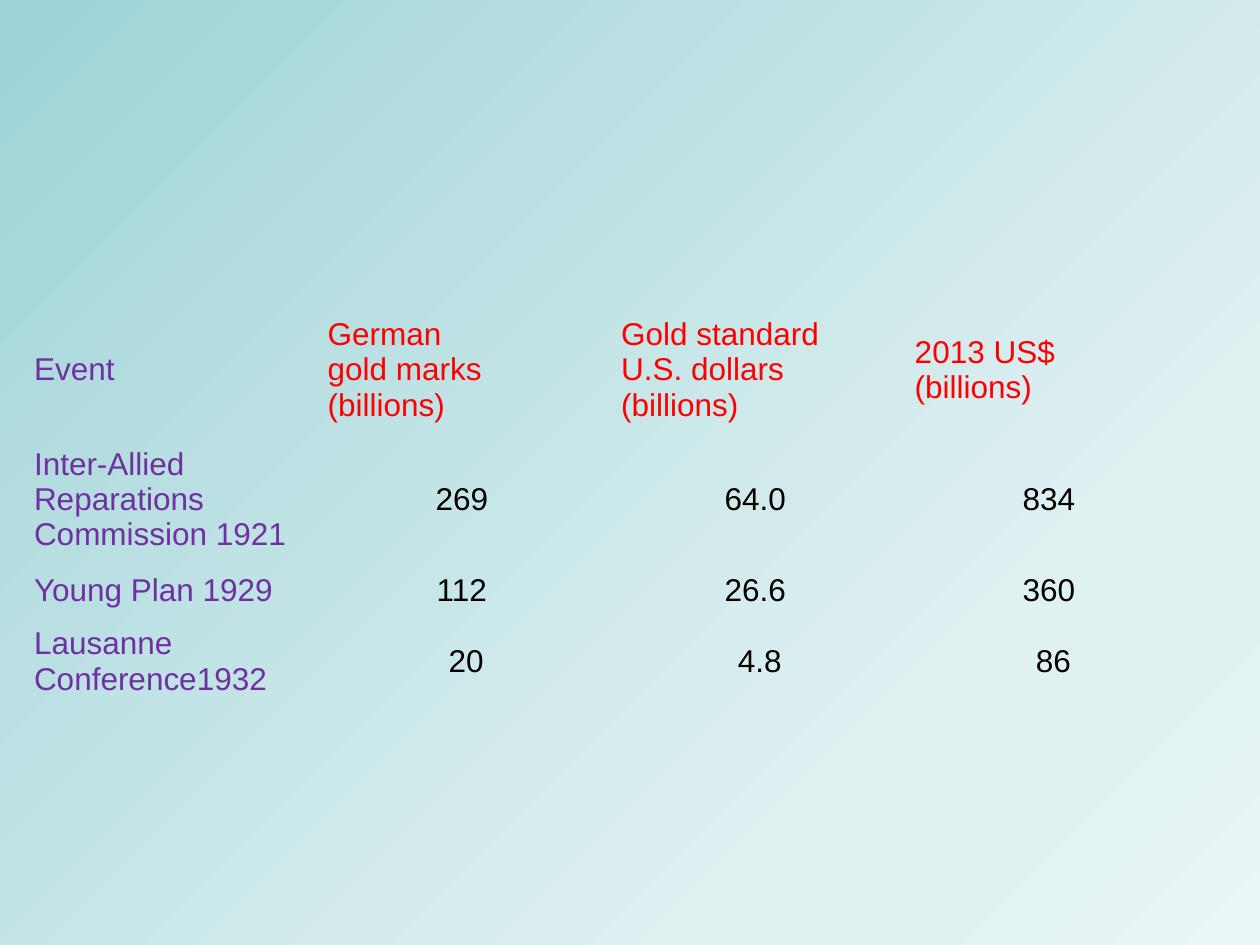
from lxml import etree
from pptx import Presentation
from pptx.dml.color import RGBColor
from pptx.enum.text import MSO_ANCHOR, PP_ALIGN
from pptx.oxml.ns import qn
from pptx.util import Inches, Pt

MIDDLE = MSO_ANCHOR.MIDDLE
LEFT, CENTER = PP_ALIGN.LEFT, PP_ALIGN.CENTER

PURPLE = RGBColor(0x70, 0x30, 0xA0)
RED = RGBColor(0xFF, 0x00, 0x00)
BLACK = RGBColor(0x00, 0x00, 0x00)
TEAL = RGBColor(0x9E, 0xD3, 0xD7)
PALE = RGBColor(0xE0, 0xF1, 0xF2)
PALEST = RGBColor(0xEB, 0xF6, 0xF7)

BACKGROUND_STOPS = [(0, TEAL), (74, PALE), (83, PALE), (100, PALEST)]

# "\v" is a line break inside a paragraph
REPARATIONS = [
    ["Event", "German\vgold marks\v(billions)",
     "Gold standard\vU.S. dollars\v(billions)", "2013 US$\v(billions)"],
    ["Inter-Allied Reparations Commission 1921", "269", "64.0", "834"],
    ["Young Plan 1929", "112", "26.6", "360"],
    ["Lausanne Conference1932", " 20", " 4.8", " 86"],
]
ROW_HEIGHTS = [1.03, 1.03, 0.41, 0.72]
COLUMN_WIDTH = 2.33


class SlideBuilder:
    font = "Arial"
    size = Pt(18)

    def __init__(self, slide):
        self.slide = slide

    def background(self, stops, angle):
        """Fill with a gradient; stops are (percent, colour), angle is clockwise."""
        fill = self.slide.background.fill
        fill.gradient()
        fill.gradient_angle = 360 - angle
        gs_list = self.slide.element.find(".//" + qn("a:gsLst"))
        for gs in list(gs_list):
            gs_list.remove(gs)
        for percent, color in stops:
            gs = etree.SubElement(gs_list, qn("a:gs"), pos=str(percent * 1000))
            etree.SubElement(gs, qn("a:srgbClr"), val=str(color))

    def cell(self, cell, text, color, align):
        cell.fill.background()
        cell.vertical_anchor = MIDDLE
        p = cell.text_frame.paragraphs[0]
        p.text = text
        p.alignment = align
        for r in p.runs:
            r.font.name = self.font
            r.font.size = self.size
            r.font.bold = False
            r.font.color.rgb = color

    def table(self, left, top, rows, column_width, row_heights):
        columns = len(rows[0])
        table = self.slide.shapes.add_table(
            len(rows), columns, Inches(left), Inches(top),
            Inches(column_width * columns), Inches(sum(row_heights))).table
        table.first_row = table.horz_banding = False
        style = table._tbl.tblPr.find(qn("a:tableStyleId"))
        style.text = "{2D5ABB26-0587-4C30-8999-92F81FD0307C}"  # no style, no grid
        for column in table.columns:
            column.width = Inches(column_width)
        for i, (row, height) in enumerate(zip(rows, row_heights)):
            table.rows[i].height = Inches(height)
            for j, text in enumerate(row):
                color = PURPLE if j == 0 else RED if i == 0 else BLACK
                align = CENTER if i and j else LEFT
                self.cell(table.cell(i, j), text, color, align)


def main():
    prs = Presentation()
    prs.slide_width, prs.slide_height = Inches(10), Inches(7.5)
    s = SlideBuilder(prs.slides.add_slide(prs.slide_layouts[6]))
    s.background(BACKGROUND_STOPS, 45)
    s.table(0.17, 2.42, REPARATIONS, COLUMN_WIDTH, ROW_HEIGHTS)
    prs.save("out.pptx")


if __name__ == "__main__":
    main()
